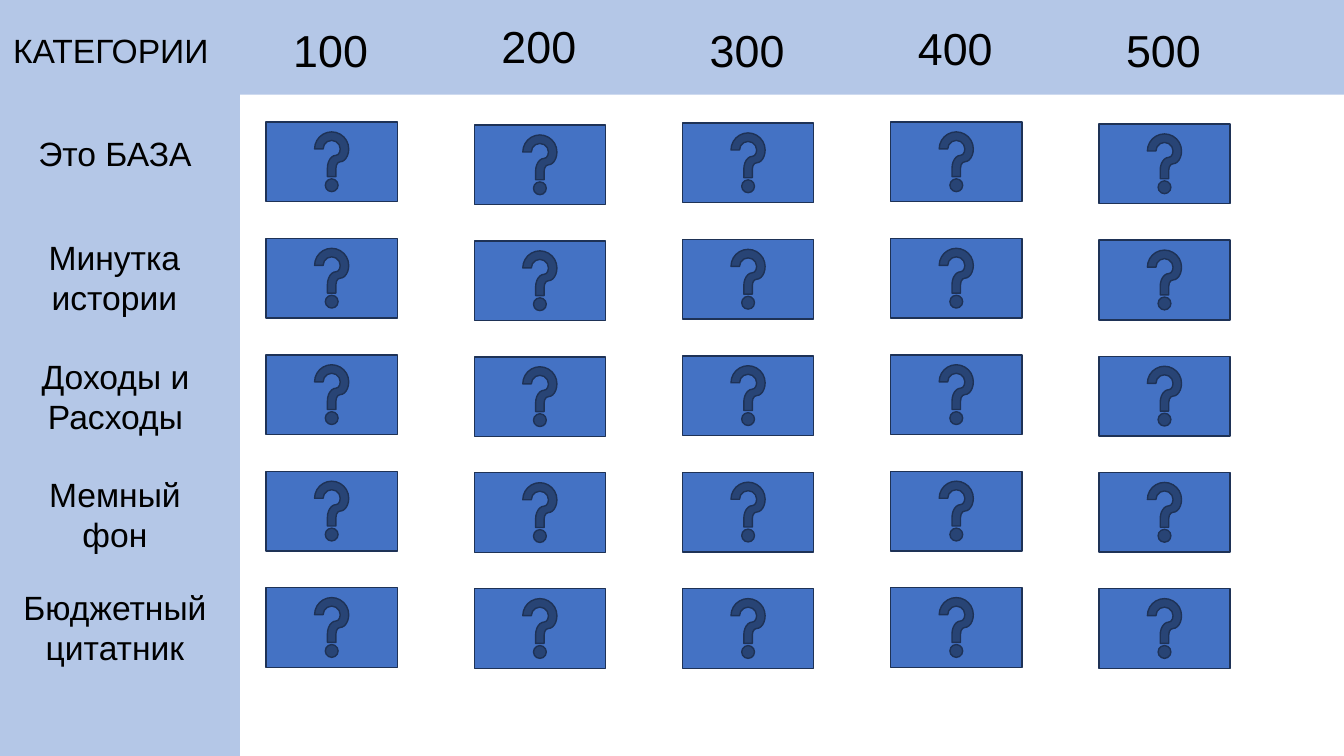
from pptx import Presentation
from pptx.dml.color import RGBColor
from pptx.enum.shapes import MSO_SHAPE
from pptx.enum.text import MSO_AUTO_SIZE, PP_ALIGN
from pptx.util import Inches, Pt

RECT = MSO_SHAPE.RECTANGLE
HELP = MSO_SHAPE.ACTION_BUTTON_HELP
GROW = MSO_AUTO_SIZE.SHAPE_TO_FIT_TEXT
LEFT, CENTER = PP_ALIGN.LEFT, PP_ALIGN.CENTER

COLORS = {"band": "B4C7E7", "button": "4472C4", "edge": "1E3256", "text": "000000"}
FONT = "Arial"

CATEGORIES = [
    ("Это БАЗА", 0.27, 1.27, 1.74, 0.5, False),
    ("Минутка истории", 0.22, 2.3, 1.83, 0.94, True),
    ("Доходы и Расходы", 0.24, 3.48, 1.81, 0.91, True),
    ("Мемный фон", 0.27, 4.65, 1.74, 0.91, True),
    ("Бюджетный цитатник", 0.05, 5.77, 2.18, 0.91, True),
]
PRICES = [
    ("100", 0.18, 1.21, 5.83),
    ("200", 0.14, 1.24, 5.84),
    ("300", 0.18, 1.22, 5.84),
    ("400", 0.16, 1.21, 5.83),
    ("500", 0.18, 1.23, 5.84),
]
COLUMN_LEFT, COLUMN_STEP = 2.64, 2.065
BUTTON_W, BUTTON_H = 1.3, 0.79
PRICE_W, PRICE_H = 0.95, 0.64


class Board:
    def __init__(self, prs):
        self.slide = prs.slides.add_slide(prs.slide_layouts[6])

    def color(self, name):
        return RGBColor.from_string(COLORS[name])

    def shape(self, kind, x, y, w, h, fill, edge=None):
        s = self.slide.shapes.add_shape(kind, Inches(x), Inches(y), Inches(w), Inches(h))
        s.shadow.inherit = False
        s.fill.solid()
        s.fill.fore_color.rgb = self.color(fill)
        if edge:
            s.line.color.rgb = self.color(edge)
            s.line.width = Pt(1)
        else:
            s.line.fill.background()

    def band(self, x, y, w, h):
        self.shape(RECT, x, y, w, h, "band")

    def button(self, x, y):
        self.shape(HELP, x, y, BUTTON_W, BUTTON_H, "button", "edge")

    def text(self, words, x, y, w, h, size=24, align=CENTER, wrap=False):
        s = self.slide.shapes.add_textbox(Inches(x), Inches(y), Inches(w), Inches(h))
        tf = s.text_frame
        tf.word_wrap = wrap
        tf.auto_size = GROW
        p = tf.paragraphs[0]
        p.alignment = align
        r = p.add_run()
        r.text = words
        r.font.name = FONT
        r.font.size = Pt(size)
        r.font.color.rgb = self.color("text")


def main():
    prs = Presentation()
    prs.slide_width, prs.slide_height = Inches(13.33), Inches(7.5)
    board = Board(prs)

    board.band(0, 0, 2.38, 7.5)
    board.band(1.46, 0, 11.87, 0.94)
    board.text("КАТЕГОРИИ", 0.02, 0.25, 2.16, 0.5)

    for words, x, y, w, h, wrap in CATEGORIES:
        board.text(words, x, y, w, h, wrap=wrap)

    for col, (price, price_top, first, last) in enumerate(PRICES):
        x = COLUMN_LEFT + col * COLUMN_STEP
        board.text(price, x + 0.17, price_top, PRICE_W, PRICE_H, size=32, align=LEFT)
        step = (last - first) / (len(CATEGORIES) - 1)
        for row in range(len(CATEGORIES)):
            board.button(x, first + row * step)

    prs.save("out.pptx")


if __name__ == "__main__":
    main()
